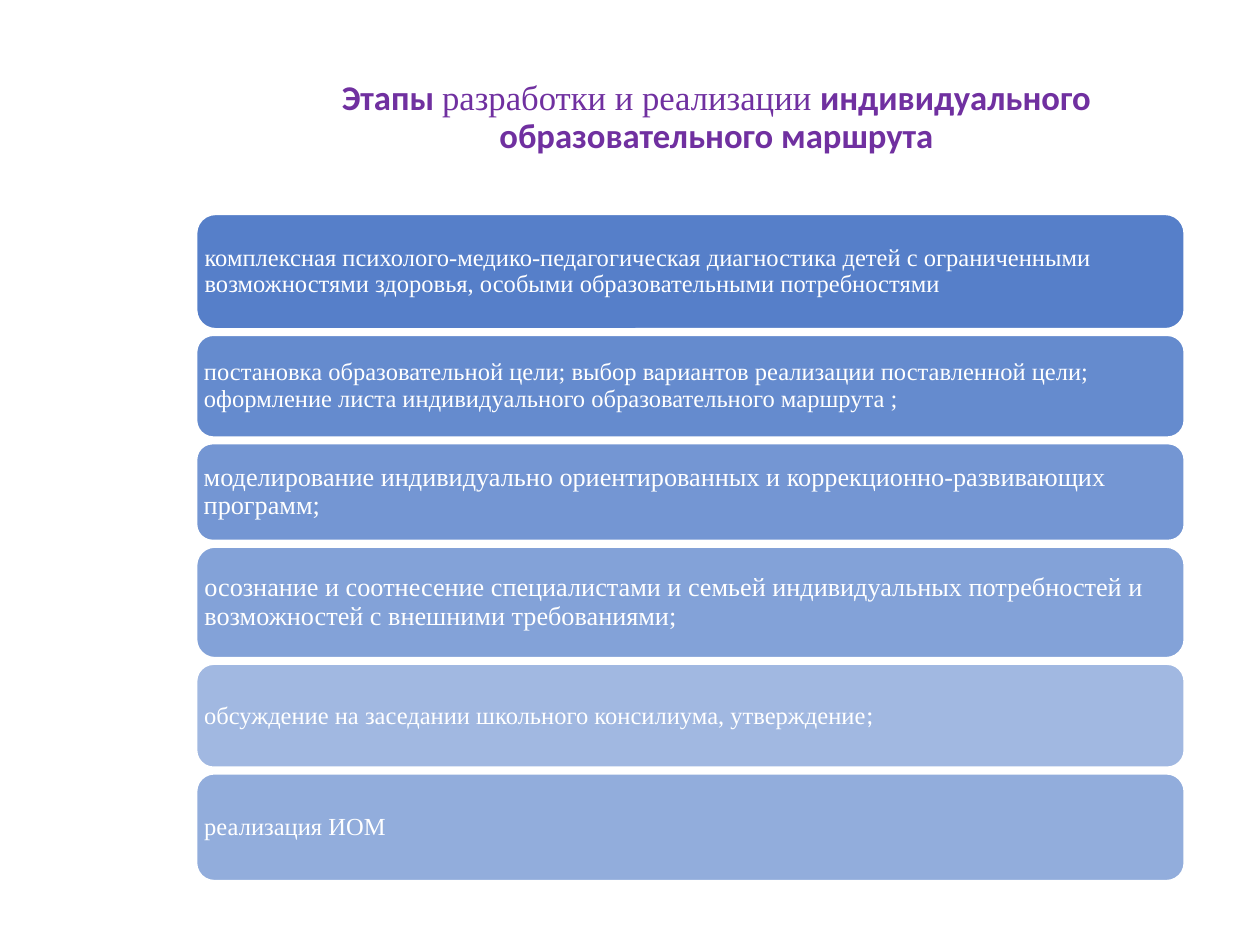
from lxml import etree
from pptx import Presentation
from pptx import util as u
from pptx.dml.color import RGBColor
from pptx.enum import shapes, text
from pptx.oxml.ns import qn

WIDTH, HEIGHT = u.Inches(10), u.Inches(7.5)
COLORS = {"stage": "4472C4", "white": "FFFFFF", "title": "7030A0"}
SERIF, SANS = "Times New Roman", "Calibri"

# Stage column, in percent of the slide's size
STAGE_LEFT, STAGE_WIDTH = 15.6, 78.4
FIRST_TOP, GAP = 22.67, 0.67

TITLE = [
    ("Этапы ", SANS, True),
    ("разработки и реализации ", SERIF, False),
    ("индивидуального образовательного маршрута", SANS, True),
]

# Height in percent, opacity in percent, runs of (words, font, size)
STAGES = [
    (12.13, 90, [("комплексная психолого-медико-педагогическая диагностика детей "
                  "с ограниченными возможностями здоровья, особыми "
                  "образовательными потребностями", SERIF, 14)]),
    (10.8, 82, [("постановка образовательной цели; выбор вариантов реализации "
                 "поставленной цели; оформление листа индивидуального "
                 "образовательного маршрута ;", SERIF, 14)]),
    (10.27, 74, [("моделирование индивидуально ориентированных и "
                  "коррекционно-развивающих программ;", SERIF, 15)]),
    (11.73, 66, [("осознание и соотнесение специалистами и семьей индивидуальных "
                  "потребностей и возможностей с внешними требованиями;", SERIF, 15)]),
    (10.93, 50, [("обсуждение на заседании школьного консилиума, утверждение",
                  SERIF, 14), (";", SANS, 15)]),
    (11.33, 58, [("реализация ИОМ", SERIF, 14)]),
]


def color(name):
    return RGBColor.from_string(COLORS[name])


def area(left, top, width, height):
    """Turn percentages of the slide into lengths."""
    return (int(WIDTH * left / 100), int(HEIGHT * top / 100),
            int(WIDTH * width / 100), int(HEIGHT * height / 100))


def add_run(paragraph, words, font, size, tint, bold=False):
    run = paragraph.add_run()
    run.text = words
    run.font.name = font
    run.font.size = u.Pt(size)
    run.font.bold = bold
    run.font.color.rgb = color(tint)


def format_paragraph(frame, alignment):
    frame.word_wrap = True
    frame.auto_size = text.MSO_AUTO_SIZE.NONE
    frame.vertical_anchor = text.MSO_ANCHOR.MIDDLE
    paragraph = frame.paragraphs[0]
    paragraph.alignment = alignment
    paragraph.line_spacing = 0.9
    return paragraph


def fill_title(title):
    title.left, title.top, title.width, title.height = area(18.4, 6.67, 76.9, 12.53)
    paragraph = format_paragraph(title.text_frame, text.PP_ALIGN.CENTER)
    title.text_frame.margin_bottom = u.Inches(0.11)
    for words, font, bold in TITLE:
        add_run(paragraph, words, font, 19.8, "title", bold)


def add_stage(slide, top, height, opacity, runs):
    stage = slide.shapes.add_shape(shapes.MSO_SHAPE.ROUNDED_RECTANGLE,
                                   *area(STAGE_LEFT, top, STAGE_WIDTH, height))
    stage.shadow.inherit = False
    stage.fill.solid()
    stage.fill.fore_color.rgb = color("stage")
    tint = stage.fill._xPr.find(qn("a:solidFill"))[0]
    etree.SubElement(tint, qn("a:alpha"), val=str(opacity * 1000))
    stage.line.color.rgb = color("white")
    stage.line.width = u.Pt(1)

    # Rounded corners already inset the text, so the margins stay small
    frame = stage.text_frame
    frame.margin_left = frame.margin_right = u.Inches(0.02)
    frame.margin_top = frame.margin_bottom = u.Inches(0.02)
    paragraph = format_paragraph(frame, text.PP_ALIGN.LEFT)
    for words, font, size in runs:
        add_run(paragraph, words, font, size, "white")


def main():
    deck = Presentation()
    deck.slide_width, deck.slide_height = WIDTH, HEIGHT
    slide = deck.slides.add_slide(deck.slide_layouts[5])

    # Heading
    fill_title(slide.shapes.title)

    # Stages, stacked with equal gaps
    top = FIRST_TOP
    for height, opacity, runs in STAGES:
        add_stage(slide, top, height, opacity, runs)
        top += height + GAP

    deck.save("out.pptx")


if __name__ == "__main__":
    main()
